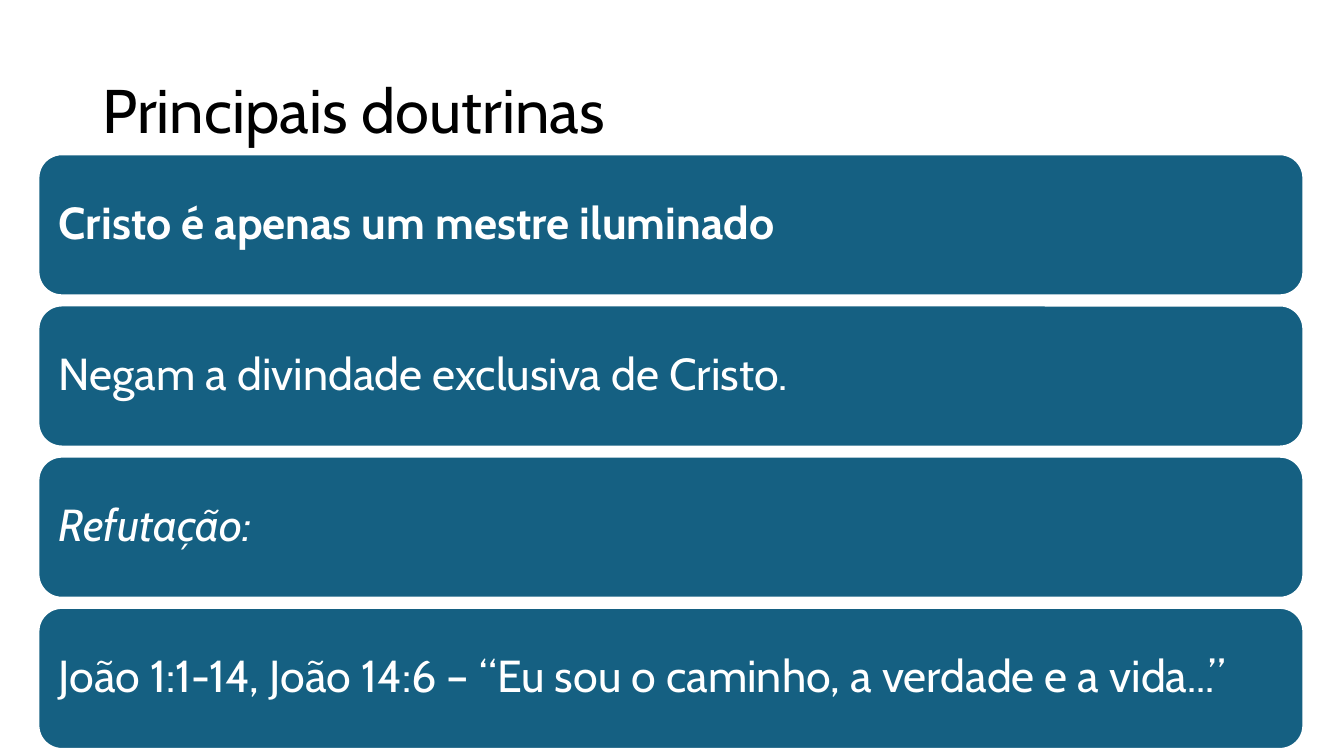
import pptx
import pptx.util
import pptx.dml.color
import pptx.enum.shapes
import pptx.enum.text

Pt = pptx.util.Pt
RGBColor = pptx.dml.color.RGBColor

BLUE = RGBColor(0x15, 0x60, 0x82)
WHITE = RGBColor(0xFF, 0xFF, 0xFF)
BLACK = RGBColor(0x00, 0x00, 0x00)

DOCTRINES = [
    ("Cristo é apenas um mestre iluminado", {"bold": True}),
    ("Negam a divindade exclusiva de Cristo.", {}),
    ("Refutação:", {"italic": True}),
    ("João 1:1-14, João 14:6 – “Eu sou o caminho, a verdade e a vida...”", {}),
]
BAR_LEFT, BAR_TOP, BAR_WIDTH, BAR_HEIGHT = 27.4, 110.2, 903.6, 100.8
BAR_PITCH = 108


class SlideBuilder:
    font_name = "Cabin"
    line_spacing = 0.9

    def __init__(self, slide):
        self.slide = slide

    def fill_text(self, frame, text, size, color, margins, emphasis):
        frame_format = {
            "word_wrap": True,
            "vertical_anchor": pptx.enum.text.MSO_ANCHOR.MIDDLE,
            **{f"margin_{side}": Pt(gap) for side, gap in margins.items()},
        }
        for name, value in frame_format.items():
            setattr(frame, name, value)
        paragraph = frame.paragraphs[0]
        paragraph.alignment = pptx.enum.text.PP_ALIGN.LEFT
        paragraph.line_spacing = self.line_spacing
        run = paragraph.add_run()
        run.text = text
        font_format = {"name": self.font_name, "size": Pt(size), **emphasis}
        for name, value in font_format.items():
            setattr(run.font, name, value)
        run.font.color.rgb = color

    def title(self, text, left, top, width, height):
        heading = self.slide.shapes.add_textbox(
            Pt(left), Pt(top), Pt(width), Pt(height))
        margins = {"left": 7.2, "right": 7.2, "top": 3.6, "bottom": 3.6}
        self.fill_text(heading.text_frame, text, 44, BLACK, margins, {})

    def bar(self, text, left, top, width, height, emphasis):
        bar = self.slide.shapes.add_shape(
            pptx.enum.shapes.MSO_SHAPE.ROUNDED_RECTANGLE,
            Pt(left), Pt(top), Pt(width), Pt(height))
        bar.shadow.inherit = False
        bar.fill.solid()
        bar.fill.fore_color.rgb = BLUE
        bar.line.color.rgb = WHITE
        bar.line.width = Pt(1.5)
        margins = dict.fromkeys(("left", "right", "top", "bottom"), 9.6)
        self.fill_text(bar.text_frame, text, 32, WHITE, margins, emphasis)


def main():
    deck = pptx.Presentation()
    deck.slide_width, deck.slide_height = Pt(960), Pt(540)
    builder = SlideBuilder(deck.slides.add_slide(deck.slide_layouts[6]))
    builder.title("Principais doutrinas", 66, 28.75, 828, 104.4)
    for row, (doctrine, emphasis) in enumerate(DOCTRINES):
        builder.bar(doctrine, BAR_LEFT, BAR_TOP + row * BAR_PITCH,
                    BAR_WIDTH, BAR_HEIGHT, emphasis)
    deck.save("out.pptx")


if __name__ == "__main__":
    main()
